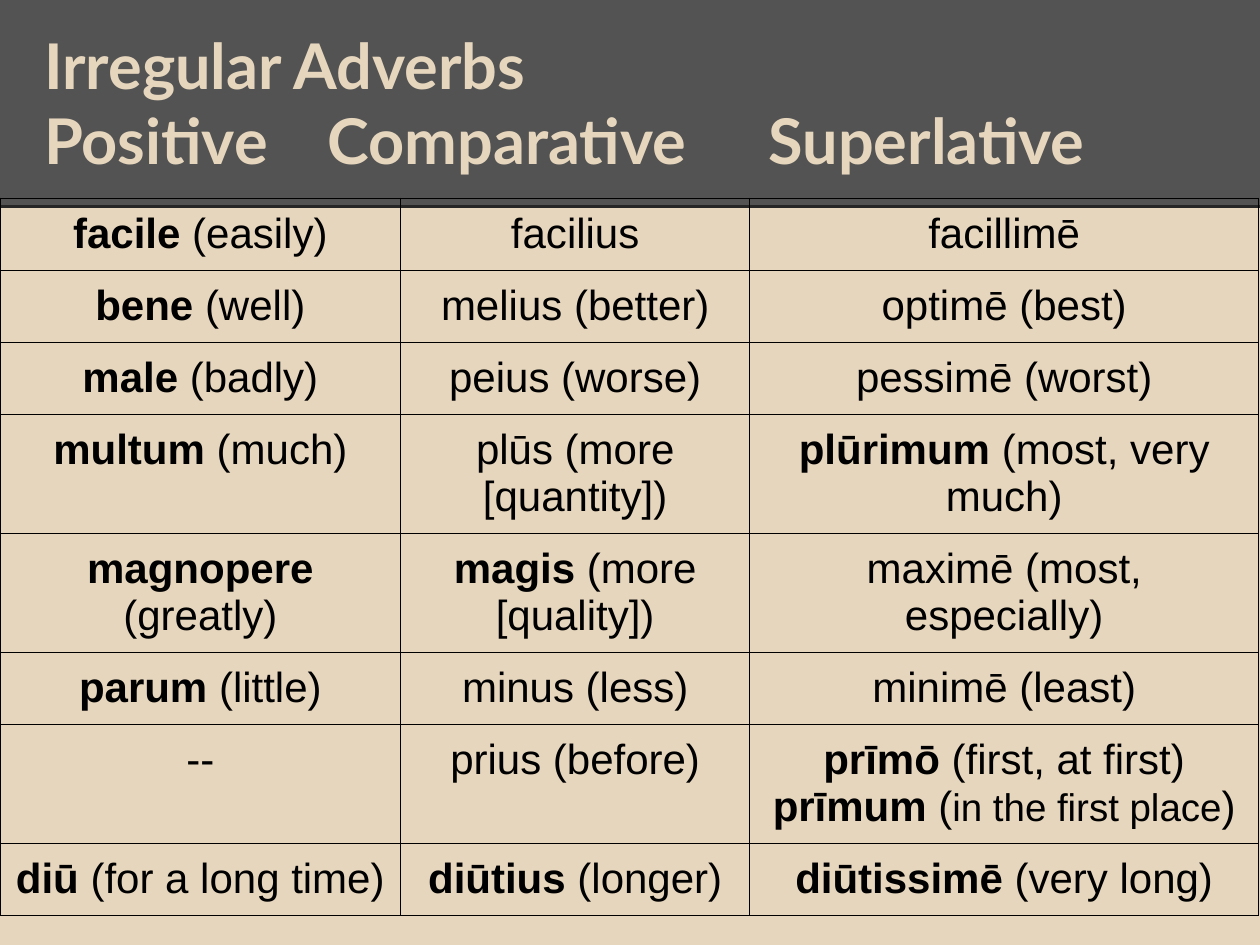
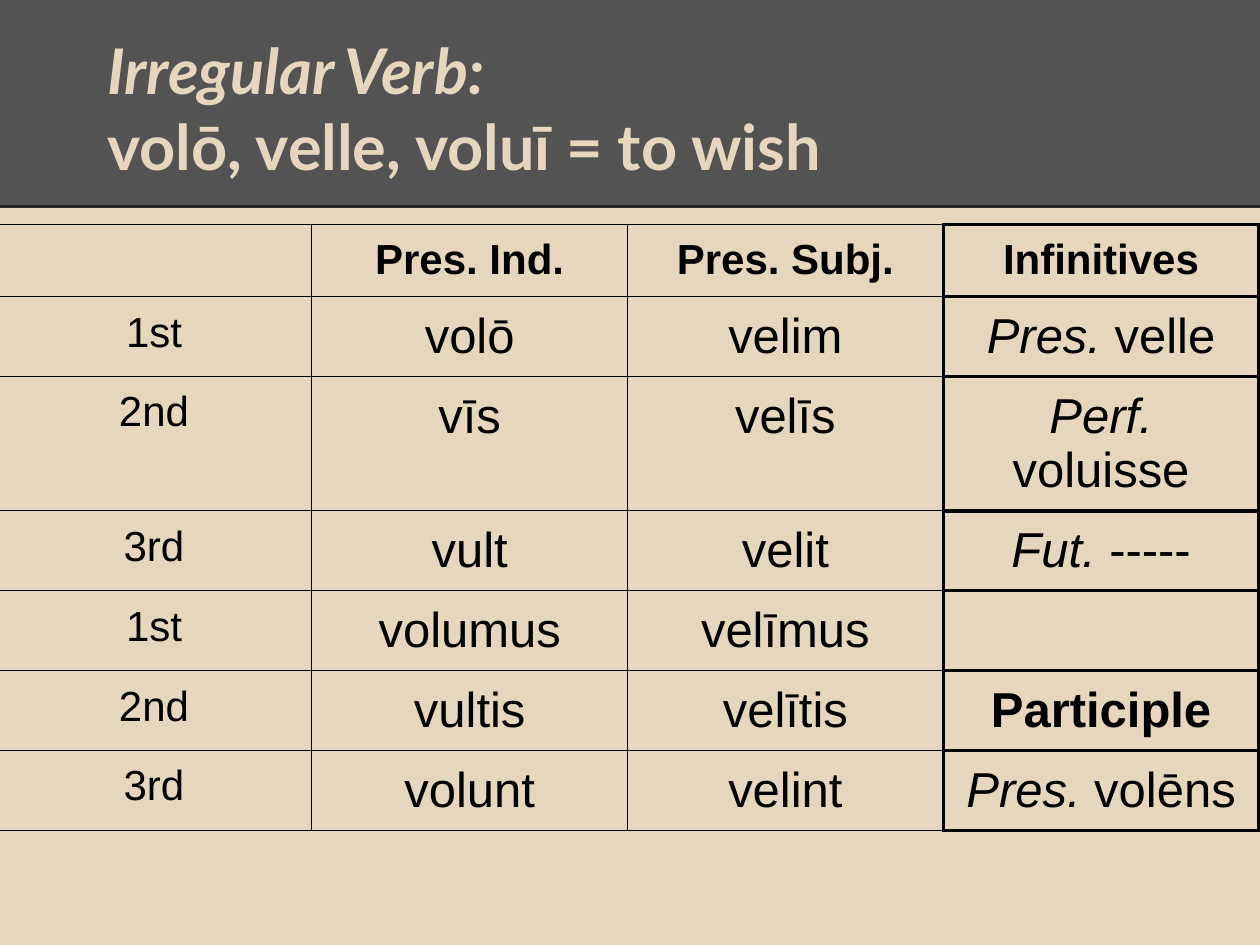
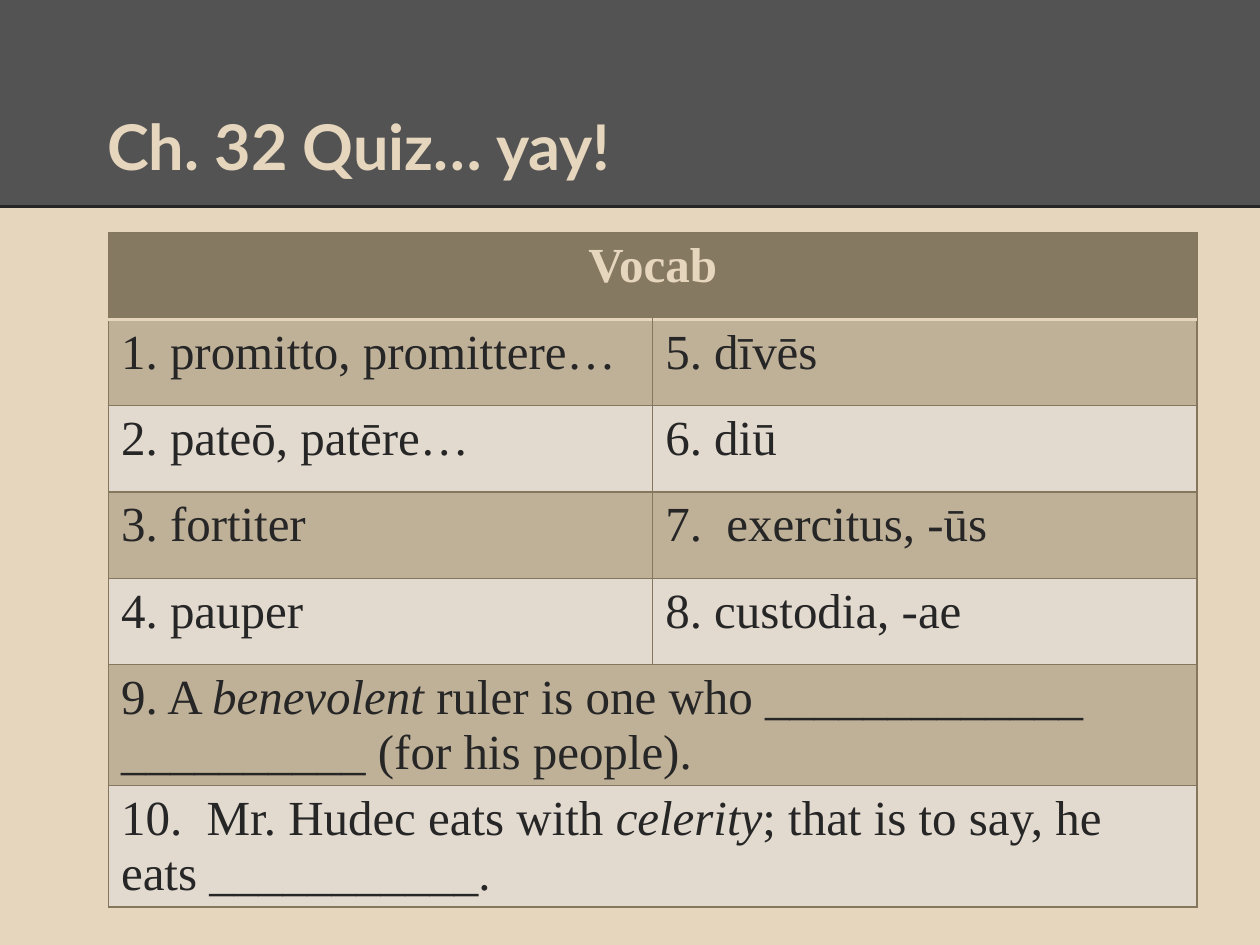
from dataclasses import dataclass

from lxml import etree
from pptx import Presentation
from pptx import util as u
from pptx.dml import color
from pptx.enum import shapes, text
from pptx.oxml import ns

Pt = u.Pt
SIDES = ("L", "R", "T", "B")


@dataclass(frozen=True)
class Theme:
    sand: str = "E6D6BD"
    band: str = "535353"
    ink: str = "262626"
    black: str = "000000"
    olive: str = "867961"
    olive_edge: str = "84775E"
    pale: str = "E2D9CF"
    title_font: str = "Lato"
    table_font: str = "Arial"
    quiz_font: str = "Times New Roman"
    title_size: int = 36
    large: int = 28
    medium: int = 24
    small: int = 22
    band_height: int = 118
    inset: float = 7.2


THEME = Theme()


def rgb(value):
    return color.RGBColor.from_string(value)


def write(frame, content, font, size, ink, bold=False, emphasis="bold", align="LEFT"):
    """Bars enclose emphasised text and tildes enclose small text."""
    for number, line in enumerate(content.split("\n")):
        paragraph = frame.add_paragraph() if number else frame.paragraphs[0]
        paragraph.alignment = getattr(text.PP_ALIGN, align)
        for i, piece in enumerate(line.split("|")):
            for j, words in enumerate(piece.split("~")):
                if not words:
                    continue
                run = paragraph.add_run()
                run.text = words
                run.font.name = font
                run.font.size = Pt(THEME.small if j % 2 else size)
                run.font.color.rgb = rgb(ink)
                run.font.bold = bold
                if i % 2:
                    setattr(run.font, emphasis, True)


class Deck:
    def __init__(self, theme):
        self.theme = theme
        self.prs = Presentation()
        self.prs.slide_width, self.prs.slide_height = Pt(720), Pt(540)
        self.layout = self.prs.slide_layouts[5]
        self.slide = None
        backdrop = self.prs.slide_master.background.fill
        backdrop.solid()
        backdrop.fore_color.rgb = rgb(theme.sand)

    def new_slide(self):
        first = self.slide is None
        self.slide = self.prs.slides.add_slide(self.layout)
        if first:
            self.share_header()

    def share_header(self):
        height = Pt(self.theme.band_height)
        band = self.slide.shapes.add_shape(
            shapes.MSO_SHAPE.RECTANGLE, 0, 0, Pt(720), height)
        band.shadow.inherit = False
        band.fill.solid()
        band.fill.fore_color.rgb = rgb(self.theme.band)
        band.line.fill.background()
        rule = self.slide.shapes.add_connector(
            shapes.MSO_CONNECTOR.STRAIGHT, 0, height, Pt(720), height)
        rule.line.color.rgb = rgb(self.theme.ink)
        rule.line.width = Pt(2.25)
        etree.SubElement(rule.element.spPr, ns.qn("a:effectLst"))
        for offset, part in enumerate((band, rule)):
            part.element.xpath(".//p:cNvPr")[0].set("id", str(101 + offset))
            self.layout.shapes.element.insert(2 + offset, part.element)

    def title(self, content, left=36, top=21.6, width=648, tabs=(), **look):
        title = self.slide.shapes.title
        title.left, title.top, title.width, title.height = (
            Pt(left), Pt(top), Pt(width), Pt(90))
        frame = title.text_frame
        frame.word_wrap = True
        frame.auto_size = text.MSO_AUTO_SIZE.NONE
        frame.vertical_anchor = text.MSO_ANCHOR.BOTTOM
        frame.margin_left = frame.margin_right = Pt(self.theme.inset)
        frame.margin_top = frame.margin_bottom = Pt(self.theme.inset)
        write(frame, content, self.theme.title_font, self.theme.title_size,
              self.theme.sand, bold=True, **look)
        for props in title.element.xpath(".//a:pPr"):
            props.set("marL", "0")
            props.set("indent", str(Pt(18)))
            if tabs:
                stops = etree.SubElement(props, ns.qn("a:tabLst"))
                for stop in tabs:
                    etree.SubElement(stops, ns.qn("a:tab"), pos=str(Pt(stop)), algn="l")

    def table(self, rows, at, widths, row_height, look, edges, fill=None, inset=7.2):
        left, top, width, height = map(Pt, at)
        holder = self.slide.shapes.add_table(
            len(rows), len(widths), left, top, width, height)
        table = holder.table
        table.first_row = table.horz_banding = False
        for column, size in zip(table.columns, widths):
            column.width = Pt(size)
        for row in table.rows:
            row.height = Pt(row_height)
        holder.height = height
        cells = holder.element.xpath(".//a:tc")
        for r, row in enumerate(rows):
            if len(row) < len(widths):
                table.cell(r, 0).merge(table.cell(r, len(widths) - 1))
            for c in range(len(widths)):
                cell = table.cell(r, c)
                cell.margin_left = cell.margin_right = Pt(7.2)
                cell.margin_top = cell.margin_bottom = Pt(inset)
                if c < len(row) and row[c]:
                    write(cell.text_frame, row[c], **look(r, c))
                props = cells[r * len(widths) + c].get_or_add_tcPr()
                self.paint(cell, props, fill(r) if fill else None)
                self.border(props, edges(r, c))
        return table

    def paint(self, cell, props, fill):
        if not fill:
            cell.fill.background()
            return
        ink, opacity = fill
        cell.fill.solid()
        cell.fill.fore_color.rgb = rgb(ink)
        if opacity < 100:
            tint = props.find(".//" + ns.qn("a:srgbClr"))
            etree.SubElement(tint, ns.qn("a:alpha"), val=str(opacity * 1000))

    def border(self, props, edges):
        for position, side in enumerate(SIDES):
            ink, weight = edges[side]
            line = etree.Element(ns.qn("a:ln" + side), w=str(Pt(weight)))
            solid = etree.SubElement(line, ns.qn("a:solidFill"))
            etree.SubElement(solid, ns.qn("a:srgbClr"), val=ink)
            props.insert(position, line)


def adverbs(deck):
    theme = deck.theme
    deck.new_slide()
    deck.title("Irregular Adverbs\nPositive\tComparative\t\tSuperlative",
               left=0, top=18.7, width=719.3, tabs=(216, 432, 504))
    forms = [
        ("|facile| (easily)", "facilius", "facillimē"),
        ("|bene| (well)", "melius (better)", "optimē (best)"),
        ("|male| (badly)", "peius (worse)", "pessimē (worst)"),
        ("|multum| (much)", "plūs (more [quantity])", "|plūrimum| (most, very much)"),
        ("|magnopere| (greatly)", "|magis| (more [quality])", "maximē (most, especially)"),
        ("|parum| (little)", "minus (less)", "minimē (least)"),
        ("--", "prius (before)",
         "|prīmō| (first, at first)\n|prīmum| (~in the first place~)"),
        ("|diū| (for a long time)", "|diūtius| (longer)", "|diūtissimē| (very long)"),
    ]
    style = dict(font=theme.table_font, size=theme.medium, ink=theme.black, align="CENTER")
    deck.table(forms, (0, 113.2, 719.3, 432), (229, 199.4, 290.9), 33,
               look=lambda r, c: style,
               edges=lambda r, c: dict.fromkeys(SIDES, (theme.black, 0.75)))


def volo(deck):
    theme = deck.theme
    deck.new_slide()
    deck.title("|Irregular Verb:|\nvolō, velle, voluī = to wish", emphasis="italic")
    forms = [
        ("", "Pres. Ind.", "Pres. Subj.", "Infinitives"),
        ("1st", "volō", "velim", "|Pres.| velle"),
        ("2nd", "vīs", "velīs", "|Perf.| voluisse"),
        ("3rd", "vult", "velit", "|Fut.| -----"),
        ("1st", "volumus", "velīmus", ""),
        ("2nd", "vultis", "velītis", "Participle"),
        ("3rd", "volunt", "velint", "|Pres.| volēns"),
    ]

    def look(r, c):
        return dict(font=theme.table_font, ink=theme.black, align="CENTER",
                    size=theme.large if r and c else theme.medium,
                    bold=r == 0 or forms[r][c] == "Participle", emphasis="italic")

    def edges(r, c):
        thin, thick = (theme.black, 0.75), (theme.black, 2.25)
        lines = dict.fromkeys(SIDES, thick if c == 3 else thin)
        if c == 2:
            lines["R"] = thick
        return lines

    deck.table(forms, (-2.2, 128.2, 721.4, 365), [180.4] * 4, 30, look, edges)


def quiz(deck):
    theme = deck.theme
    deck.new_slide()
    deck.title("Ch. 32 Quiz… yay!")
    questions = [
        ("Vocab",),
        ("1. promitto, promittere…", "5. dīvēs"),
        ("2. pateō, patēre…", "6. diū"),
        ("3. fortiter", "7.  exercitus, -ūs"),
        ("4. pauper", "8. custodia, -ae"),
        ("9. A |benevolent| ruler is one who _____________  __________ (for his people).",),
        ("10.  Mr. Hudec eats with |celerity|; that is to say, he eats ___________.",),
    ]

    def look(r, c):
        return dict(font=theme.quiz_font, size=theme.large, emphasis="italic",
                    ink=theme.ink if r else theme.sand, bold=r == 0,
                    align="LEFT" if r else "CENTER")

    def edges(r, c):
        lines = dict.fromkeys(SIDES, (theme.olive_edge, 0.75))
        if r < 2:
            lines["T" if r else "B"] = (theme.sand, 2)
        return lines

    def fill(r):
        if r == 0:
            return theme.olive, 100
        return (theme.olive, 40) if r % 2 else (theme.pale, 100)

    deck.table(questions, (62, 133, 622, 395), [311] * 2, 49.4,
               look, edges, fill, inset=3.6)


def main():
    deck = Deck(THEME)
    adverbs(deck)
    volo(deck)
    quiz(deck)
    deck.prs.save("out.pptx")


if __name__ == "__main__":
    main()
